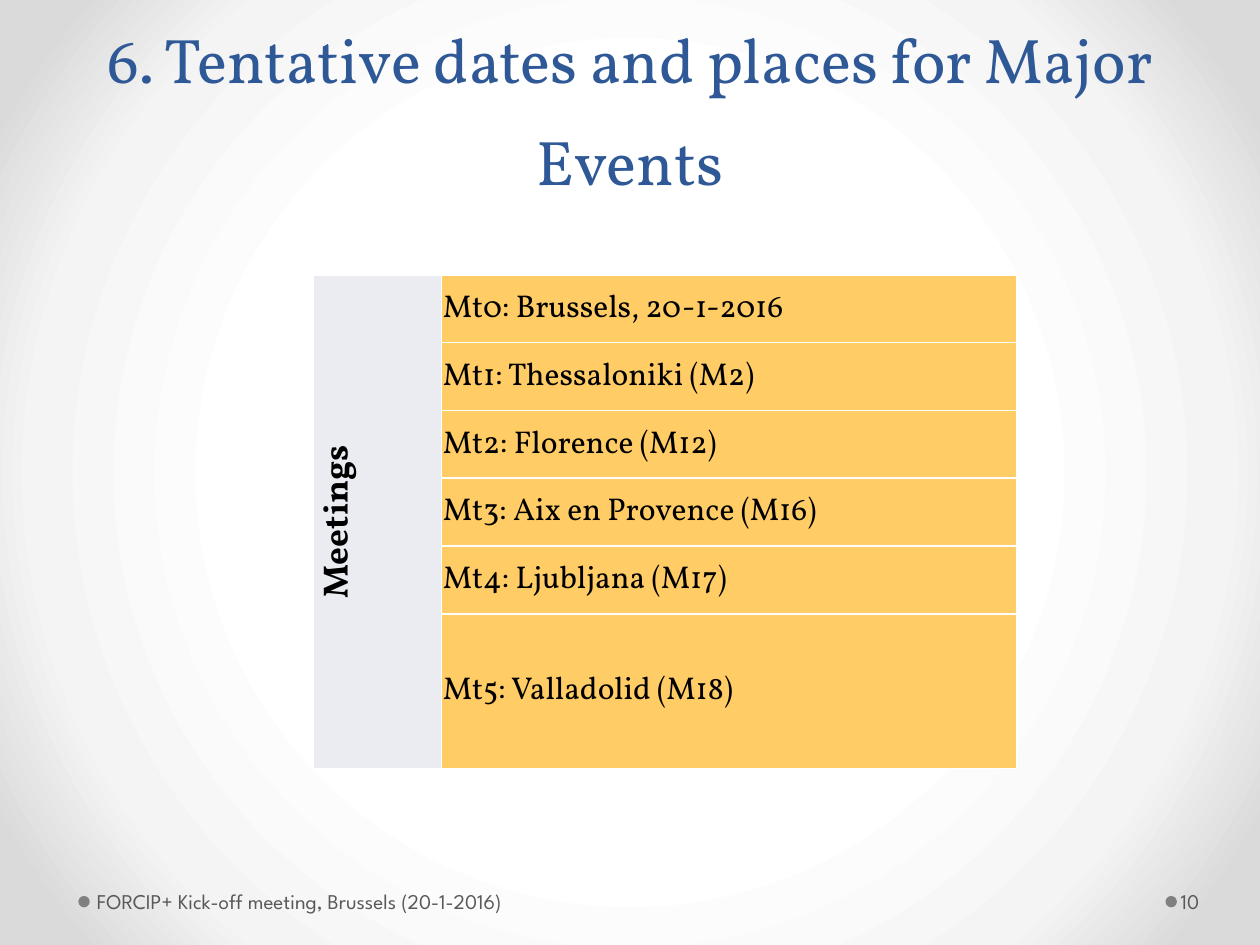
from dataclasses import dataclass

from pptx import Presentation
from pptx.dml.color import RGBColor
from pptx.enum.shapes import MSO_SHAPE
from pptx.enum.text import MSO_ANCHOR, MSO_AUTO_SIZE, PP_ALIGN
from pptx.oxml import parse_xml
from pptx.oxml.ns import nsdecls, qn
from pptx.util import Pt


@dataclass(frozen=True)
class Theme:
    serif: str = "Vollkorn"
    sans: str = "League Spartan"
    title: str = "2F5897"
    ink: str = "000000"
    footer: str = "595959"
    dot: str = "808080"
    label_fill: str = "EAECF2"
    meeting_fill: str = "FFCC66"
    border: str = "FFFFFF"
    backdrop: tuple = ((50, "FFFFFF"), (76, "F4F4F4"), (92, "DADADA"))
    title_size: int = 36
    label_size: int = 20
    meeting_size: int = 18
    footer_size: int = 12


THEME = Theme()
MEETINGS = (
    "Mt0: Brussels, 20-1-2016",
    "Mt1: Thessaloniki (M2)",
    "Mt2: Florence (M12)",
    "Mt3: Aix en Provence (M16)",
    "Mt4: Ljubljana (M17)",
    "Mt5: Valladolid (M18)",
)


def write(frame, text, *, font, size, color, bold=False, align=PP_ALIGN.LEFT, spacing=None):
    para = frame.paragraphs[0]
    para.alignment = align
    if spacing:
        para.line_spacing = Pt(spacing)
    span = para.add_run()
    span.text = text
    span.font.name = font
    span.font.size = Pt(size)
    span.font.bold = bold
    span.font.color.rgb = RGBColor.from_string(color)


def set_margins(target, left, top, right, bottom):
    target.margin_left, target.margin_top = Pt(left), Pt(top)
    target.margin_right, target.margin_bottom = Pt(right), Pt(bottom)


def paint_background(page):
    """Fill the page with a gradient that spreads in circles from its centre."""
    page.background.fill.gradient()
    stops = "".join(
        f'<a:gs pos="{percent * 1000}"><a:srgbClr val="{color}"/></a:gs>'
        for percent, color in THEME.backdrop
    )
    radial = parse_xml(
        f'<a:gradFill {nsdecls("a")} rotWithShape="1"><a:gsLst>{stops}</a:gsLst>'
        '<a:path path="circle"><a:fillToRect l="50000" t="50000" r="50000" b="50000"/>'
        "</a:path></a:gradFill>"
    )
    linear = page.element.find(".//" + qn("a:gradFill"))
    linear.getparent().replace(linear, radial)


def place_title(page, box, text):
    title = page.shapes.title
    title.left, title.top, title.width, title.height = map(Pt, box)
    frame = title.text_frame
    frame.word_wrap = True
    frame.auto_size = MSO_AUTO_SIZE.NONE
    frame.vertical_anchor = MSO_ANCHOR.BOTTOM
    write(frame, text, font=THEME.serif, size=THEME.title_size, color=THEME.title,
          align=PP_ALIGN.CENTER, spacing=58)


def place_footer(page, box, text, dot_left, margins):
    """Place a footer text and the dot that stands before it."""
    left, top, width, height = box
    diameter = 6.5
    dot = page.shapes.add_shape(MSO_SHAPE.OVAL, Pt(dot_left), Pt(top + 11.5),
                                Pt(diameter), Pt(diameter))
    dot.shadow.inherit = False
    dot.fill.solid()
    dot.fill.fore_color.rgb = RGBColor.from_string(THEME.dot)
    dot.line.fill.background()

    frame = page.shapes.add_textbox(Pt(left), Pt(top), Pt(width), Pt(height)).text_frame
    frame.word_wrap = True
    frame.vertical_anchor = MSO_ANCHOR.MIDDLE
    set_margins(frame, *margins)
    write(frame, text, font=THEME.sans, size=THEME.footer_size, color=THEME.footer)


def format_cell(cell, fill):
    cell.vertical_anchor = MSO_ANCHOR.MIDDLE
    set_margins(cell, 0.75, 0.75, 0.75, 0)
    cell.fill.solid()
    cell.fill.fore_color.rgb = RGBColor.from_string(fill)
    properties = cell._tc.get_or_add_tcPr()
    for index, side in enumerate("LRTB"):
        properties.insert(index, parse_xml(
            f'<a:ln{side} {nsdecls("a")} w="{Pt(1)}"><a:solidFill>'
            f'<a:srgbClr val="{THEME.border}"/></a:solidFill></a:ln{side}>'
        ))


def place_meetings(page, box, label, meetings):
    """Place a table with one upright label beside the list of meetings."""
    left, top, width, height = box
    label_width = 73.5
    table = page.shapes.add_table(len(meetings), 2, *map(Pt, box)).table
    table.first_row = table.horz_banding = False
    table.columns[0].width = Pt(label_width)
    table.columns[1].width = Pt(width - label_width)
    for index, meeting in enumerate(meetings):
        table.rows[index].height = Pt(height / len(meetings))
        format_cell(table.cell(index, 0), THEME.label_fill)
        cell = table.cell(index, 1)
        format_cell(cell, THEME.meeting_fill)
        write(cell.text_frame, meeting, font=THEME.serif, size=THEME.meeting_size,
              color=THEME.ink)

    heading = table.cell(0, 0)
    heading.merge(table.cell(len(meetings) - 1, 0))
    heading._tc.get_or_add_tcPr().set("vert", "vert270")
    write(heading.text_frame, label, font=THEME.serif, size=THEME.label_size,
          color=THEME.ink, bold=True, align=PP_ALIGN.CENTER)


def main():
    deck = Presentation()
    deck.slide_width, deck.slide_height = Pt(720), Pt(540)
    page = deck.slides.add_slide(deck.slide_layouts[5])
    paint_background(page)
    place_title(page, (36, 0, 648, 116.6), "6. Tentative dates and places for Major Events")
    place_footer(page, (51.8, 500.5, 353.5, 28.8),
                 "FORCIP+ Kick-off meeting, Brussels (20-1-2016)", 44.8, (3.6, 3.6, 7.2, 3.6))
    place_footer(page, (672.5, 500.5, 44, 28.8), "10", 666, (2.2, 3.6, 3.6, 3.6))
    place_meetings(page, (178.8, 157, 402.3, 232.6), "Meetings", MEETINGS)
    deck.save("out.pptx")


if __name__ == "__main__":
    main()
